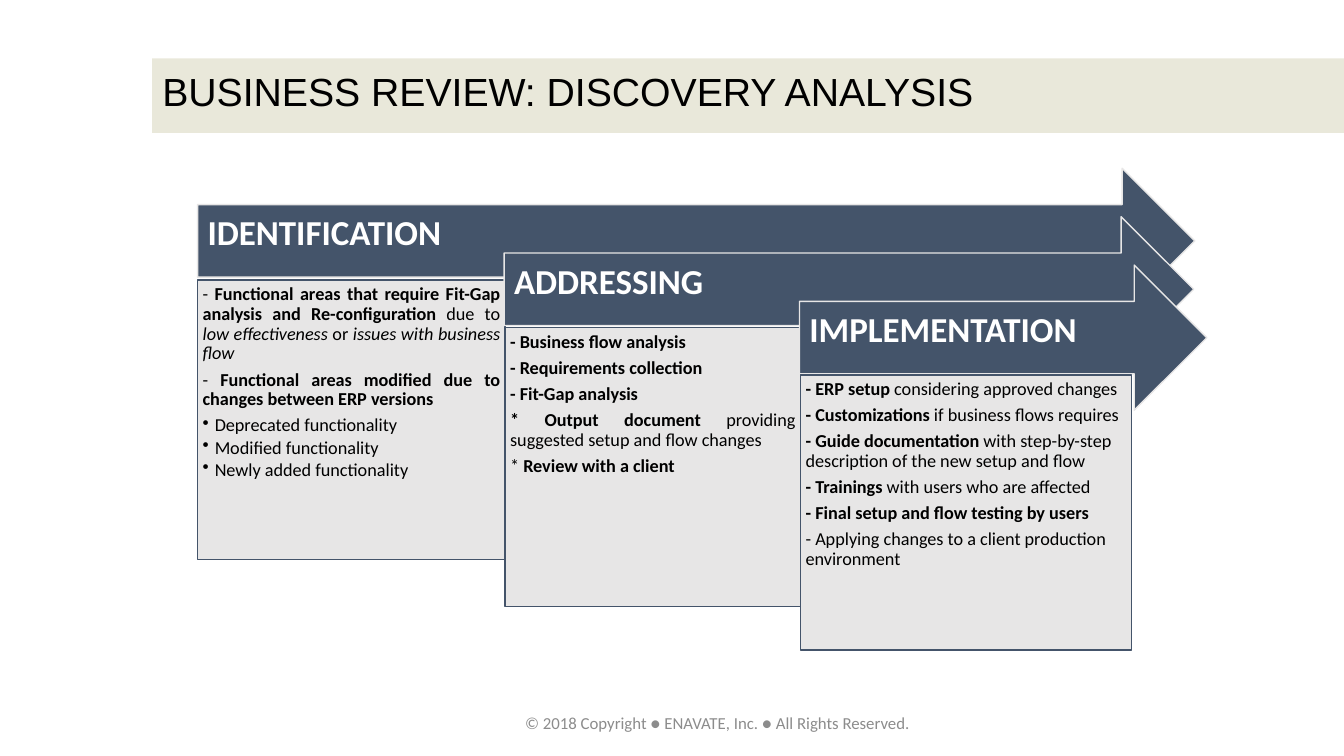
from lxml.etree import SubElement as Sub
from pptx import Presentation as Deck
from pptx.dml.color import RGBColor as Rgb
from pptx.enum.shapes import MSO_SHAPE as Kind
from pptx.enum.text import MSO_ANCHOR as Anchor, MSO_AUTO_SIZE as Fit, PP_ALIGN as Align
from pptx.oxml.ns import qn
from pptx.util import Emu, Inches, Pt

NAVY, GRAY, SAND = "44546A", "E7E6E6", "E1DFCB"
INK, WHITE, MUTE = "000000", "FFFFFF", "8C8C8C"
COLS, ROWS = 133.3, 75


def tint(fmt, code):
    fmt.solid()
    fmt.fore_color.rgb = Rgb.from_string(code)


class Page:
    face = "Calibri"

    def __init__(self, deck):
        self.deck = deck
        self.slide = deck.slides.add_slide(deck.slide_layouts[5])
        self.shapes = self.slide.shapes

    def area(self, left, top, wide, high):
        col, row = self.deck.slide_width / COLS, self.deck.slide_height / ROWS
        return [Emu(round(n)) for n in (left * col, top * row, wide * col, high * row)]

    def shape(self, kind, grid, fill, line=None):
        item = self.shapes.add_shape(kind, *self.area(*grid))
        item.shadow.inherit = False
        tint(item.fill, fill)
        if line:
            tint(item.line.fill, line)
            item.line.width = Pt(1)
        else:
            item.line.fill.background()
        return item

    def frame(self, item, pads, anchor):
        box = item.text_frame
        box.word_wrap = True
        box.auto_size = Fit.NONE
        box.vertical_anchor = anchor
        box.margin_left, box.margin_top, box.margin_right, box.margin_bottom = map(Inches, pads)
        return box

    def words(self, para, runs, size, ink, face=None, align=Align.LEFT, gap=0, dot=False):
        para.alignment = align
        para.line_spacing = 0.9
        para.space_before = Pt(0)
        para.space_after = Pt(size * gap)
        if dot:
            para.level = 1
            prop = para._p.get_or_add_pPr()
            prop.set("marL", str(Inches(0.12)))
            prop.set("indent", str(-Inches(0.12)))
            Sub(prop, qn("a:buChar")).set("char", "•")
        for text, look in runs:
            run = para.add_run()
            run.text = text
            font = run.font
            font.name, font.size = face or self.face, Pt(size)
            font.bold, font.italic = "b" in look, "i" in look
            tint(font.fill, ink)

    def band(self, grid):
        item = self.shape(Kind.RECTANGLE, grid, SAND)
        color = item.fill._xPr.find(qn("a:solidFill"))[0]
        Sub(color, qn("a:alpha")).set("val", "70000")

    def title(self, text, grid):
        item = self.shapes.title
        item.left, item.top, item.width, item.height = self.area(*grid)
        box = self.frame(item, (0.1, 0.05, 0.1, 0.05), Anchor.MIDDLE)
        self.words(box.paragraphs[0], [(text, "")], 28, INK, "Arial")
        self.shapes._spTree.append(item._element)

    def foot(self, text, grid):
        item = self.shapes.add_textbox(*self.area(*grid))
        box = self.frame(item, (0.1, 0.05, 0.1, 0.05), Anchor.TOP)
        box.word_wrap = False
        self.words(box.paragraphs[0], [(text, "")], 12, MUTE)
        box.paragraphs[0].line_spacing = 1

    def arrow(self, text, grid):
        item = self.shape(Kind.RIGHT_ARROW, grid, NAVY, GRAY)
        box = self.frame(item, (0.1, 0.1, 0.28, 0.23), Anchor.MIDDLE)
        self.words(box.paragraphs[0], [(text, "b")], 25, WHITE, gap=0.35)

    def panel(self, lines, grid):
        item = self.shape(Kind.RECTANGLE, grid, GRAY, NAVY)
        box = self.frame(item, (0.05,) * 4, Anchor.TOP)
        for num, (mode, *runs) in enumerate(lines):
            para = box.add_paragraph() if num else box.paragraphs[0]
            dot = mode == "dot"
            align = Align.JUSTIFY if mode == "just" else Align.LEFT
            self.words(para, runs, 13, INK, align=align, gap=0.15 if dot else 0.35, dot=dot)


STEPS = [
    ("IDENTIFICATION", 19.6, 98.9, (19.6, 30.5, 27.7), [
        ("just", ("- ", ""),
         ("Functional areas that require Fit-Gap analysis and Re-configuration ", "b"),
         ("due to ", ""), ("low effectiveness ", "i"), ("or ", ""),
         ("issues with business flow", "i")),
        ("just", ("- ", ""),
         ("Functional areas modified due to changes between ERP versions", "b")),
        ("dot", ("Deprecated functionality", "")),
        ("dot", ("Modified functionality", "")),
        ("dot", ("Newly added functionality", "")),
    ]),
    ("ADDRESSING", 50, 68.4, (50.1, 29.3, 27.7), [
        ("left", ("- Business flow analysis", "b")),
        ("left", ("- Requirements collection", "b")),
        ("left", ("- Fit-Gap analysis", "b")),
        ("just", ("* Output document ", "b"),
         ("providing suggested setup and flow changes", "")),
        ("just", ("* ", ""), ("Review with a client", "b")),
    ]),
    ("IMPLEMENTATION", 79.3, 40.4, (79.4, 32.8, 27.3), [
        ("left", ("- ERP setup ", "b"), ("considering approved changes", "")),
        ("left", ("- Customizations ", "b"), ("if business flows requires", "")),
        ("left", ("- Guide documentation ", "b"),
         ("with step-by-step description of the new setup and flow", "")),
        ("left", ("- Trainings ", "b"), ("with users who are affected", "")),
        ("left", ("- Final setup and flow testing by users", "b")),
        ("left", ("- Applying changes to a client production environment", "")),
    ]),
]


def main():
    deck = Deck()
    deck.slide_width, deck.slide_height = Inches(13.33), Inches(7.5)
    page = Page(deck)
    page.band((15.1, 5.8, COLS - 15.1, 7.4))
    page.foot("© 2018 Copyright ● ENAVATE, Inc. ● All Rights Reserved.", (51.1, 70.2, 40.6, 3))
    for num, (name, left, wide, (edge, span, high), lines) in enumerate(STEPS):
        page.arrow(name, (left, 16.7 + 4.8 * num, wide, 14.4))
        page.panel(lines, (edge, 27.8 + 4.7 * num, span, high))
    page.title("BUSINESS REVIEW: DISCOVERY ANALYSIS", (15.1, 5.6, COLS - 15.1, 7.5))
    deck.save("out.pptx")


if __name__ == "__main__":
    main()
